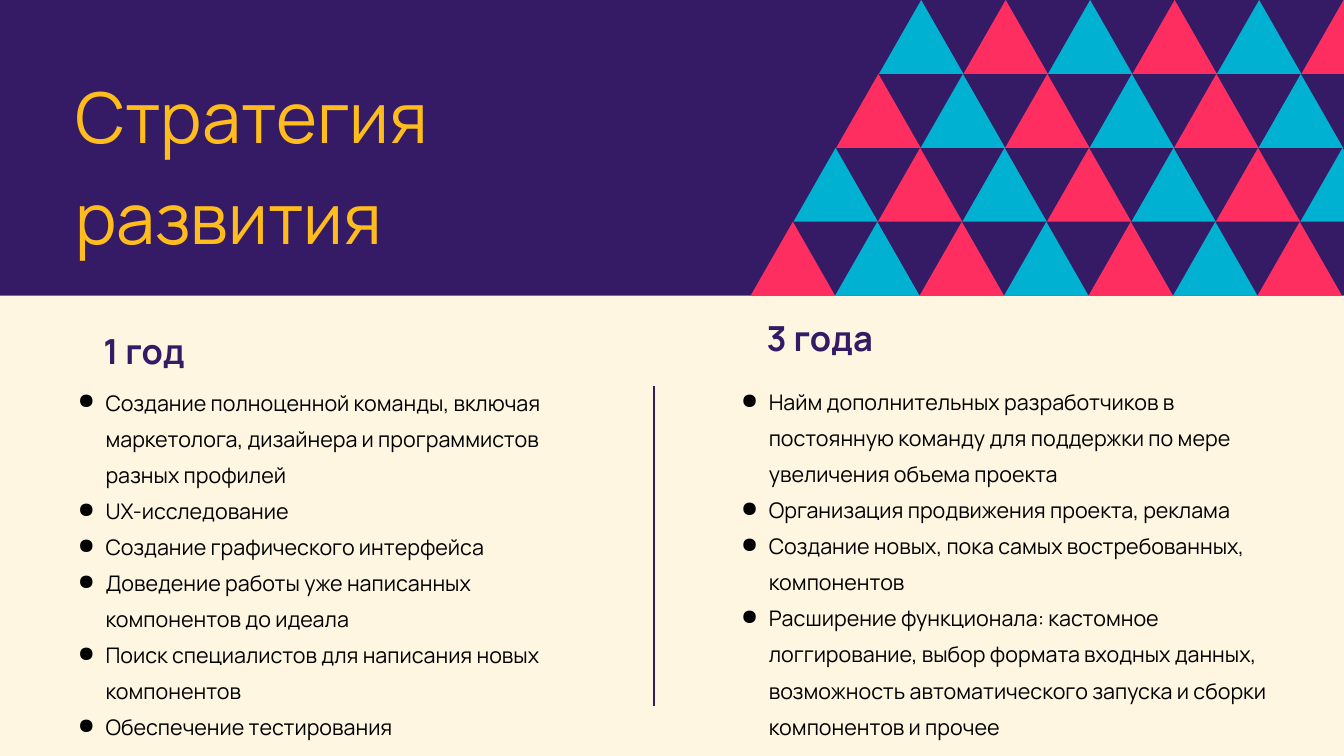
from dataclasses import dataclass
from lxml import etree
from pptx import Presentation, util as u
from pptx.dml.color import RGBColor
from pptx.enum import shapes, text
from pptx.oxml.ns import qn


@dataclass
class Theme:
    font: str = "Manrope"
    cream: str = "FEF6E0"
    plum: str = "351B65"
    gold: str = "FEBC1D"
    blue: str = "00B1D2"
    pink: str = "FE2E60"
    black: str = "000000"
    title: int = 75
    head: int = 37
    body: int = 23


theme = Theme()
inch = u.Inches


def add_form(kind, left, top, width, height, color):
    form = slide.shapes.add_shape(kind, inch(left), inch(top), inch(width), inch(height))
    form.shadow.inherit = False
    form.fill.solid()
    form.fill.fore_color.rgb = RGBColor.from_string(color)
    form.line.fill.background()


def add_text(left, top, width, height, lines, size, color, space=None, bold=None, list_mark=None):
    box = slide.shapes.add_textbox(inch(left), inch(top), inch(width), inch(height))
    frame = box.text_frame
    frame.word_wrap = True
    frame.auto_size = text.MSO_AUTO_SIZE.SHAPE_TO_FIT_TEXT
    frame.margin_left = frame.margin_right = frame.margin_top = frame.margin_bottom = 0
    for i, line in enumerate(lines):
        para = frame.add_paragraph() if i else frame.paragraphs[0]
        para.line_spacing = space
        run = para.add_run()
        run.text = line
        run.font.name = theme.font
        run.font.size = u.Pt(size)
        run.font.bold = bold
        run.font.color.rgb = RGBColor.from_string(color)
        if list_mark:
            props = para._p.get_or_add_pPr()
            props.set("marL", str(inch(0.5)))
            props.set("indent", str(inch(-0.41)))
            tint = etree.SubElement(props, qn("a:buClr"))
            etree.SubElement(tint, qn("a:srgbClr"), val=color)
            etree.SubElement(props, qn("a:buChar"), char=list_mark)


deck = Presentation()
deck.slide_width = inch(20)
deck.slide_height = inch(11.25)
slide = deck.slides.add_slide(deck.slide_layouts[6])
slide.background.fill.solid()
slide.background.fill.fore_color.rgb = RGBColor.from_string(theme.cream)

add_form(shapes.MSO_SHAPE.RECTANGLE, 0, 0, 20, 4.4, theme.plum)

side = 8.8 / 7
rise = 1.1
for row, count in enumerate((6, 6, 7, 7)):
    start = 13.08 - row * 1.91 / 3
    for col in range(count):
        color = (theme.blue, theme.pink)[(row + col) % 2]
        add_form(shapes.MSO_SHAPE.ISOSCELES_TRIANGLE, start + col * side, row * rise, side, rise, color)

add_text(1.12, 0.85, 8.42, 2.78, ["Стратегия развития"], theme.title, theme.gold, 1.2)

first = [
    "Создание полноценной команды, включая маркетолога, дизайнера и программистов разных профилей",
    "UX-исследование",
    "Создание графического интерфейса",
    "Доведение работы уже написанных компонентов до идеала",
    "Поиск специалистов для написания новых компонентов",
    "Обеспечение тестирования",
]
third = [
    "Найм дополнительных разработчиков в постоянную команду для поддержки по мере увеличения объема проекта",
    "Организация продвижения проекта, реклама",
    "Создание новых, пока самых востребованных, компонентов",
    "Расширение функционала: кастомное логгирование, выбор формата входных данных, "
    "возможность автоматического запуска и сборки компонентов и прочее",
]
add_text(1.54, 4.73, 5.63, 0.62, ["1 год"], theme.head, theme.plum, 1.3, True)
add_text(11.41, 4.71, 6.35, 0.62, ["3 года"], theme.head, theme.plum, bold=True)
add_text(1.07, 5.65, 7.25, 5.27, first, theme.body, theme.black, 1.4, list_mark="●")
add_text(10.94, 5.64, 8.19, 5.27, third, theme.body, theme.black, 1.4, list_mark="●")

rule = slide.shapes.add_connector(shapes.MSO_CONNECTOR.STRAIGHT, inch(9.73), inch(5.75), inch(9.73), inch(10.5))
rule.line.color.rgb = RGBColor.from_string(theme.plum)
rule.line.width = u.Pt(2.25)
etree.SubElement(rule._element.spPr, qn("a:effectLst"))

deck.save("out.pptx")
